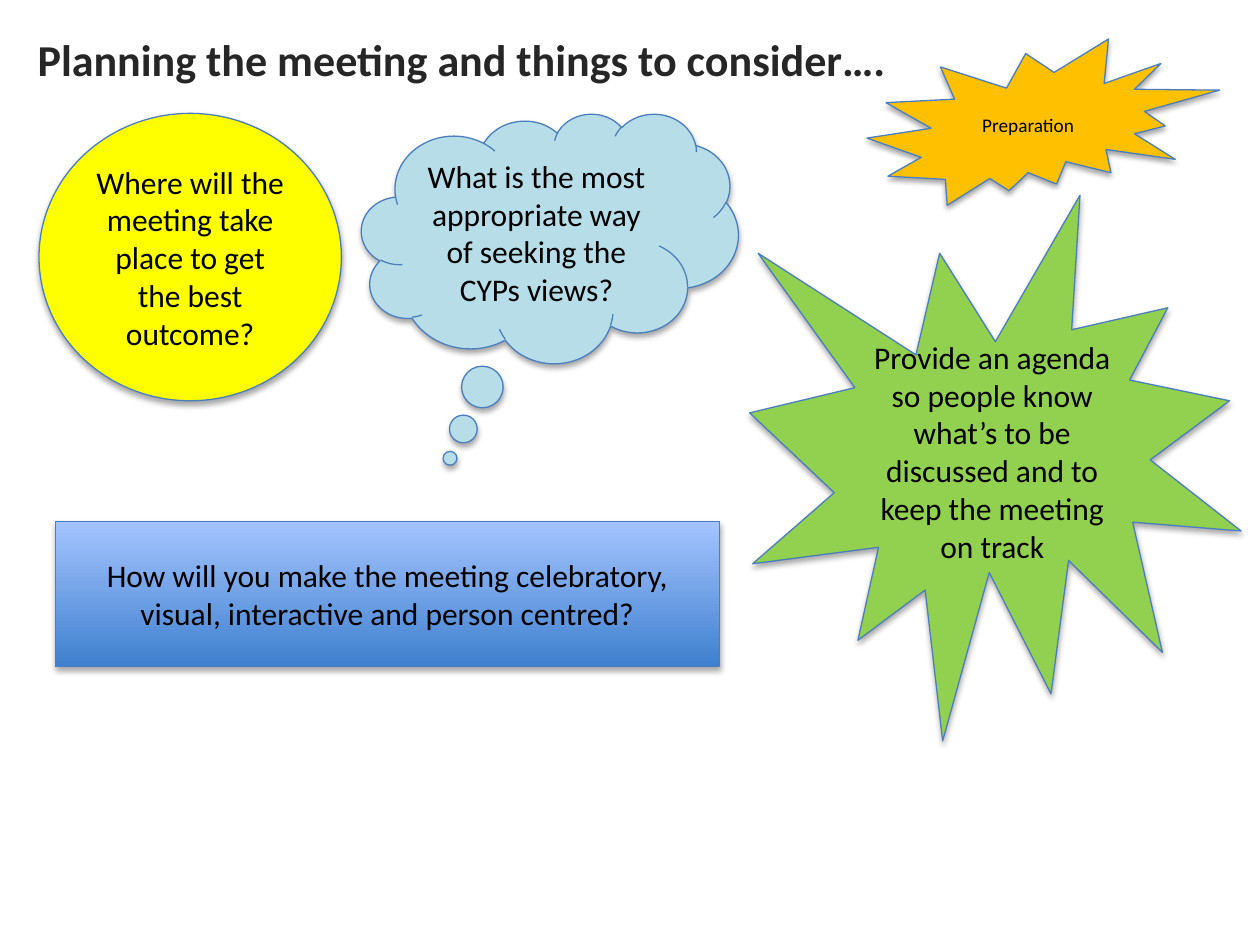
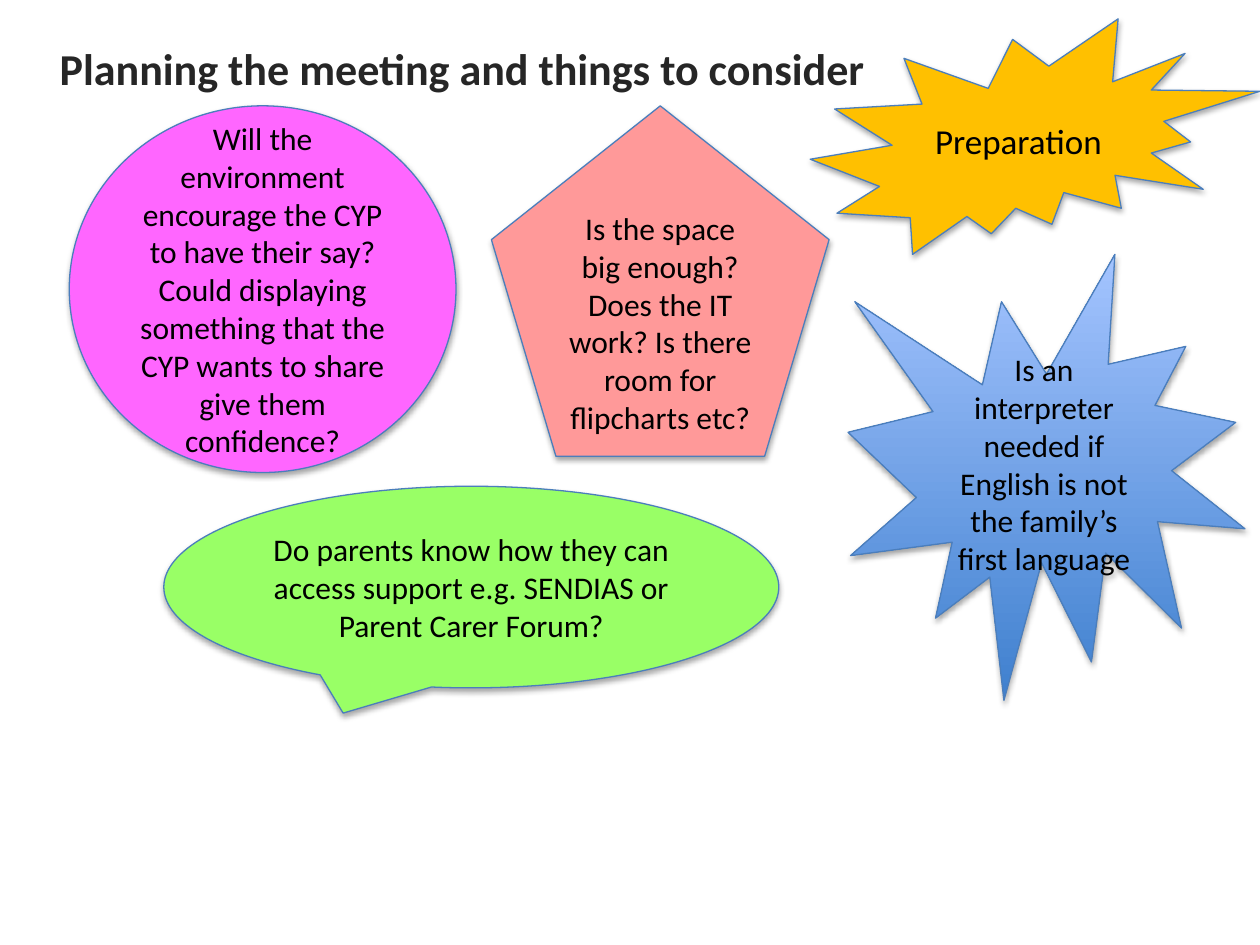
import pptx
import pptx.util
import pptx.dml.color
import pptx.enum.shapes
import pptx.enum.text
from lxml import etree

Pt = pptx.util.Pt
Kind = pptx.enum.shapes.MSO_SHAPE
Align = pptx.enum.text.PP_ALIGN
Anchor = pptx.enum.text.MSO_ANCHOR
NS = "http://schemas.openxmlformats.org/drawingml/2006/main"

# Shared look
EDGE = "4B7EBC"
GOLD = "FFC000"
BLUE = ("3F80CE", "A4C4FF")
HEAD = {"name": "Calibri", "size": Pt(25.2), "bold": True}
BODY = {"name": "Calibri", "size": Pt(18)}
SHADE = (
    f'<a:outerShdw xmlns:a="{NS}" blurRad="40000" dist="23000" dir="5400000" '
    'rotWithShape="0"><a:srgbClr val="000000"><a:alpha val="35000"/>'
    "</a:srgbClr></a:outerShdw>"
)


def tint(code):
    return pptx.dml.color.RGBColor.from_string(code)


def write(shape, text, form, color, align):
    frame = shape.text_frame
    frame.word_wrap = True
    frame.vertical_anchor = Anchor.MIDDLE
    para = frame.paragraphs[0]
    para.alignment = align
    run = para.add_run()
    run.text = text
    for key, value in form.items():
        setattr(run.font, key, value)
    run.font.color.rgb = tint(color)


# Each slide: title, title place, title alignment, then its shapes as
# kind, place (left, top, width, height), fill, text size, text, adjustments
pages = [
    ("Planning the meeting and things to consider….",
     (14.4, 12.2, 519.8, 43.2), Align.LEFT, [
        (Kind.EXPLOSION2, (495.4, 22.3, 201.6, 95), GOLD, 11,
         "Preparation ", ()),
        (Kind.FLOWCHART_CONNECTOR, (22.3, 64.8, 172.8, 164.2), "FFFF00", 18,
         "Where will the meeting take place to get the best outcome?", ()),
        (Kind.CLOUD_CALLOUT, (206.6, 64.8, 215.3, 142.6), "B7DEE8", 18,
         "What is the most appropriate way of seeking the CYPs views?",
         (-0.265, 0.882)),
        (Kind.RECTANGLE, (31.7, 298.1, 379.4, 82.8), BLUE, 18,
         "How will you make the meeting celebratory, visual, interactive "
         "and person centred?", ()),
        (Kind.EXPLOSION1, (428.4, 111.6, 280.8, 311.8), "92D050", 18,
         "Provide an agenda so people know what’s to be discussed and "
         "to keep the meeting on track", ()),
    ]),
    ("Planning the meeting and things to consider",
     (15.8, 17.3, 496.8, 43.2), Align.CENTER, [
        (Kind.EXPLOSION2, (463, 10.8, 257, 134.6), GOLD, 20,
         "Preparation ", ()),
        (Kind.OVAL, (39.6, 60.5, 221, 209.5), "FF66FF", 18,
         "Will the environment encourage the CYP to have their say? Could "
         "displaying something that the CYP wants to share give them "
         "confidence?", ()),
        (Kind.REGULAR_PENTAGON, (280.8, 60.5, 193, 200.2), "FF9999", 18,
         "Is the space big enough? Does the IT work? Is there room for "
         "flipcharts etc?", ()),
        (Kind.OVAL_CALLOUT, (93.6, 277.9, 351.4, 115.2), "99FF66", 18,
         "Do parents know how they can access support e.g. SENDIAS or "
         "Parent Carer Forum?", ()),
        (Kind.EXPLOSION1, (484.6, 145.4, 226.8, 254.9), BLUE, 18,
         "Is an interpreter needed if English is not the family’s first "
         "language", ()),
    ]),
]

deck = pptx.Presentation()
deck.slide_width, deck.slide_height = Pt(720), Pt(540)

for title, place, align, items in pages:
    slide = deck.slides.add_slide(deck.slide_layouts[6])

    # Title
    box = slide.shapes.add_textbox(*map(Pt, place))
    write(box, title, HEAD, "262626", align)

    # Question shapes
    for kind, place, fill, size, text, bends in items:
        shape = slide.shapes.add_shape(kind, *map(Pt, place))
        for index, bend in enumerate(bends):
            shape.adjustments[index] = bend

        # Fill: one colour, or a blend from bottom to top
        if isinstance(fill, tuple):
            shape.fill.gradient()
            shape.fill.gradient_angle = 90
            for stop, code in zip(shape.fill.gradient_stops, fill):
                stop.color.rgb = tint(code)
        else:
            shape.fill.solid()
            shape.fill.fore_color.rgb = tint(fill)

        # Outline and soft shadow
        shape.line.color.rgb = tint(EDGE)
        shape.line.width = Pt(0.75)
        shape.shadow.inherit = False
        effect = shape.element.spPr.find(f"{{{NS}}}effectLst")
        effect.append(etree.fromstring(SHADE))

        write(shape, text, BODY | {"size": Pt(size)}, "000000", Align.CENTER)

deck.save("out.pptx")
